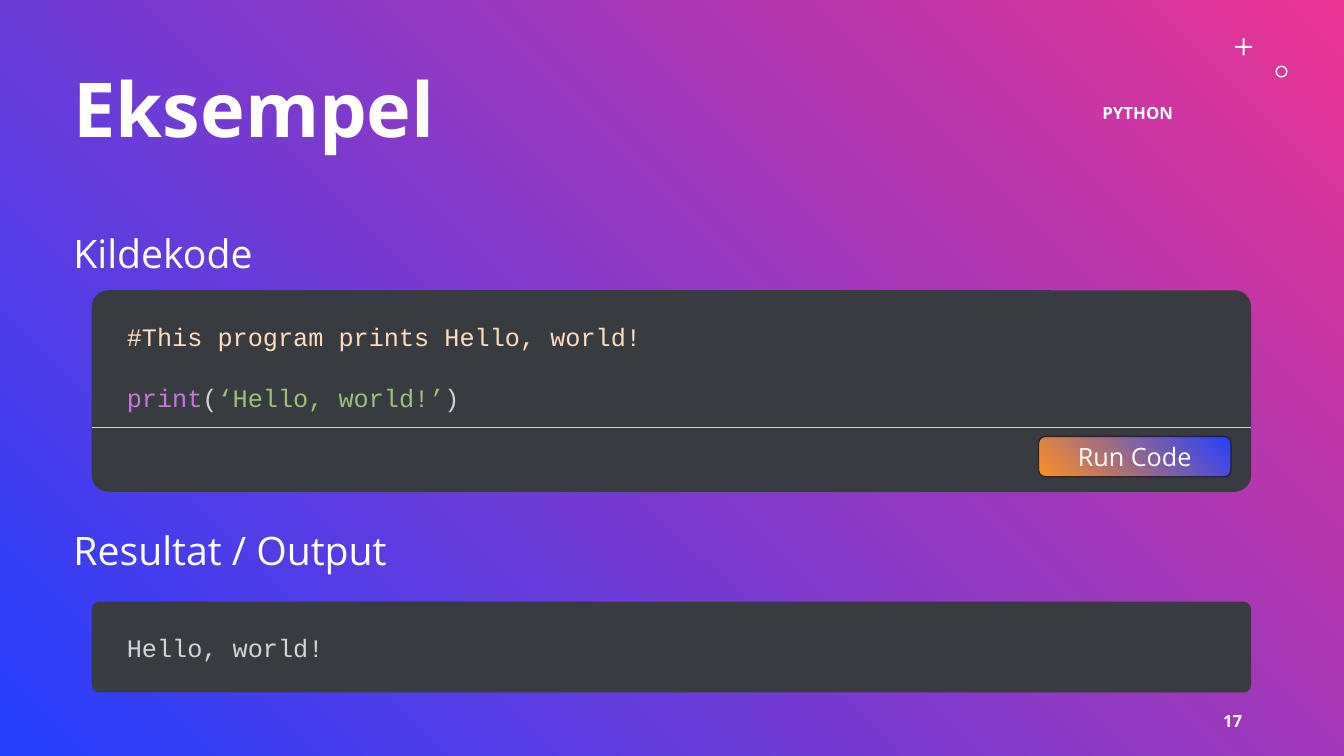
from lxml import etree
from pptx import Presentation
from pptx.dml.color import RGBColor
from pptx.enum.shapes import MSO_CONNECTOR, MSO_SHAPE
from pptx.enum.text import MSO_ANCHOR, PP_ALIGN
from pptx.oxml.ns import qn
from pptx.util import Pt

PX = 9144  # 100 px to the inch
LEFT, CENTER, RIGHT = PP_ALIGN.LEFT, PP_ALIGN.CENTER, PP_ALIGN.RIGHT
TOP, MIDDLE = MSO_ANCHOR.TOP, MSO_ANCHOR.MIDDLE
ROUNDED, CROSS, DONUT = MSO_SHAPE.ROUNDED_RECTANGLE, MSO_SHAPE.CROSS, MSO_SHAPE.DONUT
STRAIGHT = MSO_CONNECTOR.STRAIGHT
TITLE_ONLY = 5

COLORS = {
    "white": "FFFFFF",
    "blue": "243FFF",
    "pink": "E93491",
    "orange": "FF9022",
    "panel": "383B40",
    "outline": "262626",
    "output": "D5D5D5",
    "comment": "FFDDBE",
    "keyword": "C678DD",
    "bracket": "D3D3D3",
    "string": "98C379",
}
FONTS = {
    "title": {"name": "Open Sans", "size": Pt(54), "bold": True},
    "label": {"name": "Open Sans", "size": Pt(12), "bold": True},
    "heading": {"name": "Open Sans", "size": Pt(28), "bold": False},
    "button": {"name": "Open Sans", "size": Pt(18), "bold": False},
    "code": {"name": "Courier New", "size": Pt(18), "bold": False},
}
PANEL_LEFT, PANEL_WIDTH = 91, 1150
CODE_LEFT, CODE_WIDTH = 116, 766


def color(name):
    return RGBColor.from_string(COLORS[name])


def emu(*lengths):
    return [length * PX for length in lengths]


def set_gradient(fill, start, end, angle):
    fill.gradient()
    fill.gradient_angle = angle
    for stop, name in zip(fill.gradient_stops, (start, end)):
        stop.color.rgb = color(name)


def write(shape, lines, font, anchor=TOP, **paragraph_format):
    """Each line is a list of (text, colour name) runs."""
    frame = shape.text_frame
    frame.word_wrap = True
    frame.vertical_anchor = anchor
    for index, line in enumerate(lines):
        paragraph = frame.add_paragraph() if index else frame.paragraphs[0]
        for attribute, value in paragraph_format.items():
            setattr(paragraph, attribute, value)
        for text, color_name in line:
            run = paragraph.add_run()
            run.text = text
            for attribute, value in FONTS[font].items():
                setattr(run.font, attribute, value)
            run.font.color.rgb = color(color_name)


def add_text(slide, box, lines, font, anchor=TOP, **paragraph_format):
    shape = slide.shapes.add_textbox(*emu(*box))
    write(shape, lines, font, anchor, **paragraph_format)
    return shape


def add_shape(slide, kind, box, fill, adjustment):
    shape = slide.shapes.add_shape(kind, *emu(*box))
    shape.shadow.inherit = False
    shape.adjustments[0] = adjustment
    shape.fill.solid()
    shape.fill.fore_color.rgb = color(fill)
    shape.line.fill.background()
    return shape


def add_panel(slide, top, height):
    add_shape(slide, ROUNDED, (PANEL_LEFT, top, PANEL_WIDTH, height), "panel", 0.083)


def add_button(slide, box, label):
    button = add_shape(slide, ROUNDED, box, "blue", 0.167)
    set_gradient(button.fill, "blue", "orange", 225)
    button.line.color.rgb = color("outline")
    button.line.width = Pt(1)
    write(button, [[(label, "white")]], "button", MIDDLE, alignment=CENTER)


def add_divider(slide, top):
    ends = emu(PANEL_LEFT, top, PANEL_LEFT + PANEL_WIDTH, top)
    divider = slide.shapes.add_connector(STRAIGHT, *ends)
    divider.line.color.rgb = color("output")
    divider.line.width = Pt(1)
    etree.SubElement(divider.line._get_or_add_ln().getparent(), qn("a:effectLst"))


def main():
    presentation = Presentation()
    presentation.slide_width, presentation.slide_height = emu(1333, 750)
    slide = presentation.slides.add_slide(presentation.slide_layouts[TITLE_ONLY])
    set_gradient(slide.background.fill, "blue", "pink", 45)

    # Corner ornaments
    add_shape(slide, CROSS, (1225, 38, 17, 17), "white", 0.44)
    add_shape(slide, DONUT, (1265, 65, 12, 12), "white", 0.12)

    # Title
    title = slide.shapes.title
    title.left, title.top, title.width, title.height = emu(63, 40, 1178, 145)
    write(title, [[("Eksempel", "white")]], "title", MIDDLE,
          alignment=LEFT, line_spacing=0.9)

    # Topic and page number
    for text, box, alignment in (
        ("PYTHON", (930, 92, 397, 40), CENTER),
        ("17", (942, 695, 300, 40), RIGHT),
    ):
        add_text(slide, box, [[(text, "white")]], "label", MIDDLE, alignment=alignment)

    # Section headings
    for text, top in (("Kildekode", 228), ("Resultat / Output", 523)):
        add_text(slide, (63, top, 498, 90), [[(text, "white")]], "heading",
                 line_spacing=0.9)

    # Source code
    add_panel(slide, 288, 200)
    source = [
        [("#This program prints Hello, world!", "comment")],
        [("print", "keyword"), ("(", "bracket"),
         ("‘Hello, world!’", "string"), (")", "bracket")],
    ]
    code = add_text(slide, (CODE_LEFT, 314, CODE_WIDTH, 101), source, "code")
    code.text_frame.paragraphs[1].space_before = Pt(22)
    add_button(slide, (1030, 433, 191, 40), "Run Code")
    add_divider(slide, 424)

    # Program output
    add_panel(slide, 597, 90)
    add_text(slide, (CODE_LEFT, 622, CODE_WIDTH, 40),
             [[("Hello, world!", "output")]], "code")

    presentation.save("out.pptx")


if __name__ == "__main__":
    main()
